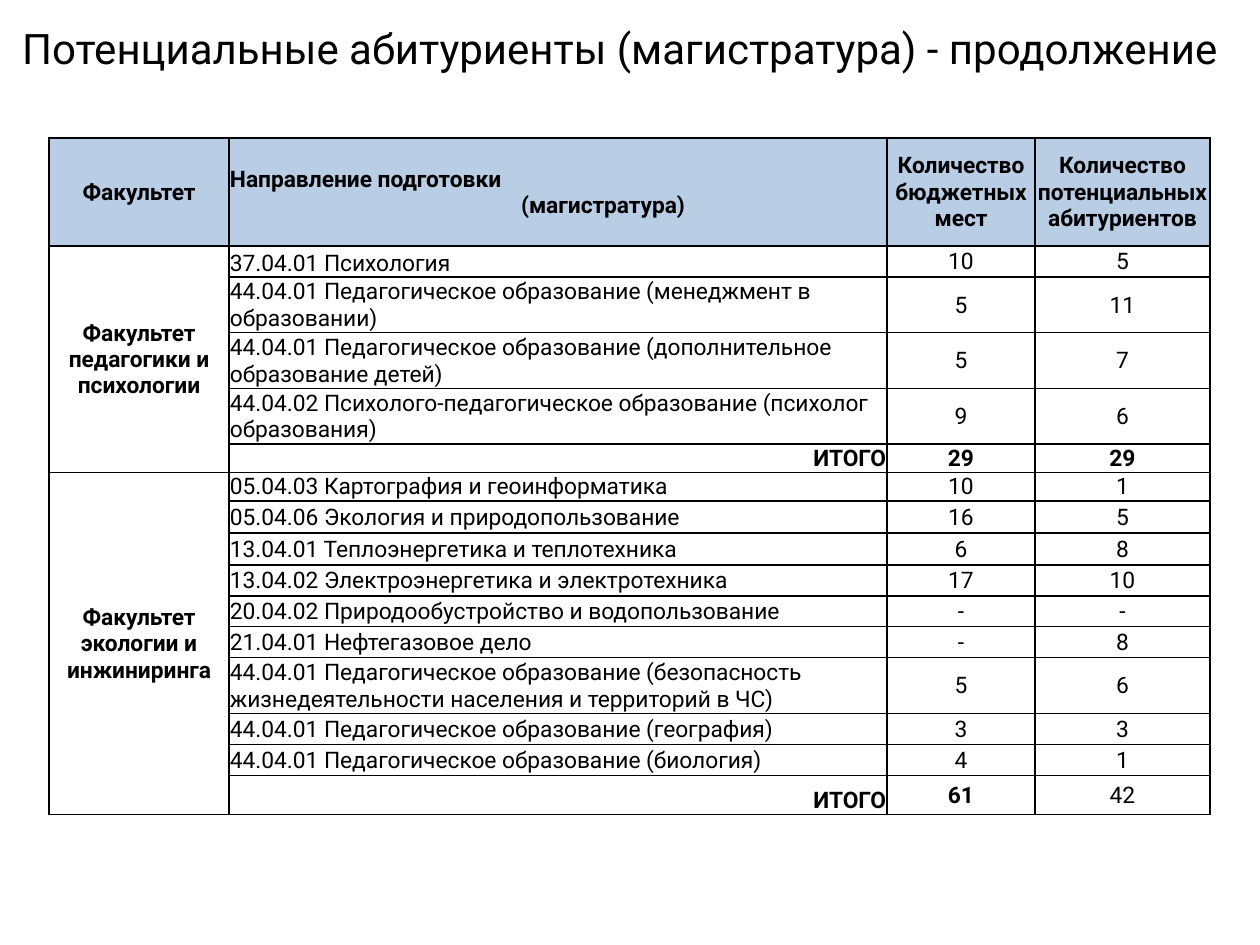
import pptx
import pptx.util
import pptx.dml.color
import pptx.enum.text
import pptx.oxml
import pptx.oxml.ns

PX = 914400 // 126
ALIGN = pptx.enum.text.PP_ALIGN
ANCHOR = pptx.enum.text.MSO_ANCHOR
THEME = {
    "font": "Roboto",
    "ink": "000000",
    "header": "B9CDE5",
    "title": 24,
    "body": 13,
    "border": 1,
}

TITLE = "Потенциальные абитуриенты (магистратура) - продолжение"
HEADER = [
    "Факультет",
    "Направление подготовки\n(магистратура)",
    "Количество бюджетных мест",
    "Количество потенциальных абитуриентов",
]
TOTAL = "ИТОГО"
FACULTIES = [
    ("Факультет педагогики и психологии", [
        ("37.04.01 Психология", "10", "5"),
        ("44.04.01 Педагогическое образование (менеджмент в образовании)", "5", "11"),
        ("44.04.01 Педагогическое образование (дополнительное образование детей)", "5", "7"),
        ("44.04.02 Психолого-педагогическое образование (психолог образования)", "9", "6"),
        (TOTAL, "29", "29"),
    ]),
    ("Факультет экологии и инжиниринга", [
        ("05.04.03 Картография и геоинформатика", "10", "1"),
        ("05.04.06 Экология и природопользование", "16", "5"),
        ("13.04.01 Теплоэнергетика и теплотехника", "6", "8"),
        ("13.04.02 Электроэнергетика и электротехника", "17", "10"),
        ("20.04.02 Природообустройство и водопользование", "-", "-"),
        ("21.04.01 Нефтегазовое дело", "-", "8"),
        ("44.04.01 Педагогическое образование (безопасность жизнедеятельности "
         "населения и территорий в ЧС)", "5", "6"),
        ("44.04.01 Педагогическое образование (география)", "3", "3"),
        ("44.04.01 Педагогическое образование (биология)", "4", "1"),
        (TOTAL, "61", "42"),
    ]),
]
COLS = [180, 658, 148, 175]
ROWS = [108, 31, 55, 54, 54, 28, 28, 32, 32, 31, 31, 31, 54, 31, 31, 39]


def px(n):
    return pptx.util.Emu(n * PX)


def rgb(name):
    return pptx.dml.color.RGBColor.from_string(THEME[name])


def set_attrs(obj, values):
    for name, value in values.items():
        setattr(obj, name, value)


def write(tf, text, size, align=ALIGN.CENTER, bold=False):
    tf.text = text
    for p in tf.paragraphs:
        p.alignment = align
        for r in p.runs:
            set_attrs(r.font, {"name": THEME["font"], "size": pptx.util.Pt(THEME[size]), "bold": bold})
            r.font.color.rgb = rgb("ink")


def add_borders(cell):
    tcPr = cell._tc.get_or_add_tcPr()
    width = pptx.util.Pt(THEME["border"])
    for side in ("lnL", "lnR", "lnT", "lnB"):
        tcPr.append(pptx.oxml.parse_xml(
            f'<a:{side} {pptx.oxml.ns.nsdecls("a")} w="{width}"><a:solidFill>'
            f'<a:srgbClr val="{THEME["ink"]}"/></a:solidFill></a:{side}>'))


def format_cell(cell, filled):
    set_attrs(cell, {
        "margin_left": px(1), "margin_right": px(1), "margin_top": px(1),
        "margin_bottom": 0, "vertical_anchor": ANCHOR.MIDDLE,
    })
    add_borders(cell)
    if filled:
        cell.fill.solid()
        cell.fill.fore_color.rgb = rgb("header")
    else:
        cell.fill.background()


def add_title(s, x, y, w, h):
    tf = s.shapes.add_textbox(px(x), px(y), px(w), px(h)).text_frame
    set_attrs(tf, {"word_wrap": True, "vertical_anchor": ANCHOR.MIDDLE})
    write(tf, TITLE, "title")


def fill_header(table):
    for c, text in enumerate(HEADER):
        write(table.cell(0, c).text_frame, text, "body", bold=True)
    first, second = table.cell(0, 1).text_frame.paragraphs
    first.alignment = ALIGN.LEFT
    second._p.get_or_add_pPr().set("marL", str(px(90)))


def fill_faculty(table, top, name, programmes):
    table.cell(top, 0).merge(table.cell(top + len(programmes) - 1, 0))
    write(table.cell(top, 0).text_frame, name, "body", bold=True)
    for row, (programme, places, applicants) in enumerate(programmes, top):
        total = programme == TOTAL
        label = table.cell(row, 1)
        align = ALIGN.RIGHT if total else ALIGN.LEFT
        write(label.text_frame, programme, "body", align, total)
        if total or row == 1:
            label.vertical_anchor = ANCHOR.BOTTOM
        write(table.cell(row, 2).text_frame, places, "body", bold=total)
        write(table.cell(row, 3).text_frame, applicants, "body", bold=total and applicants != "42")


def add_applicants(s, x, y):
    table = s.shapes.add_table(
        len(ROWS), len(COLS), px(x), px(y), px(sum(COLS)), px(sum(ROWS))).table
    set_attrs(table, {"first_row": False, "horz_banding": False})
    for col, w in zip(table.columns, COLS):
        col.width = px(w)
    for i, (row, h) in enumerate(zip(table.rows, ROWS)):
        row.height = px(h)
        for cell in row.cells:
            format_cell(cell, i == 0)
            cell.text_frame.paragraphs[0].font.size = pptx.util.Pt(THEME["body"])
    fill_header(table)
    top = 1
    for name, programmes in FACULTIES:
        fill_faculty(table, top, name, programmes)
        top += len(programmes)


def main():
    prs = pptx.Presentation()
    set_attrs(prs, {"slide_width": pptx.util.Inches(10), "slide_height": pptx.util.Inches(7.5)})
    s = prs.slides.add_slide(prs.slide_layouts[6])
    add_title(s, -59, 0, 1358, 96)
    add_applicants(s, 49, 138)
    prs.save("out.pptx")


if __name__ == "__main__":
    main()
